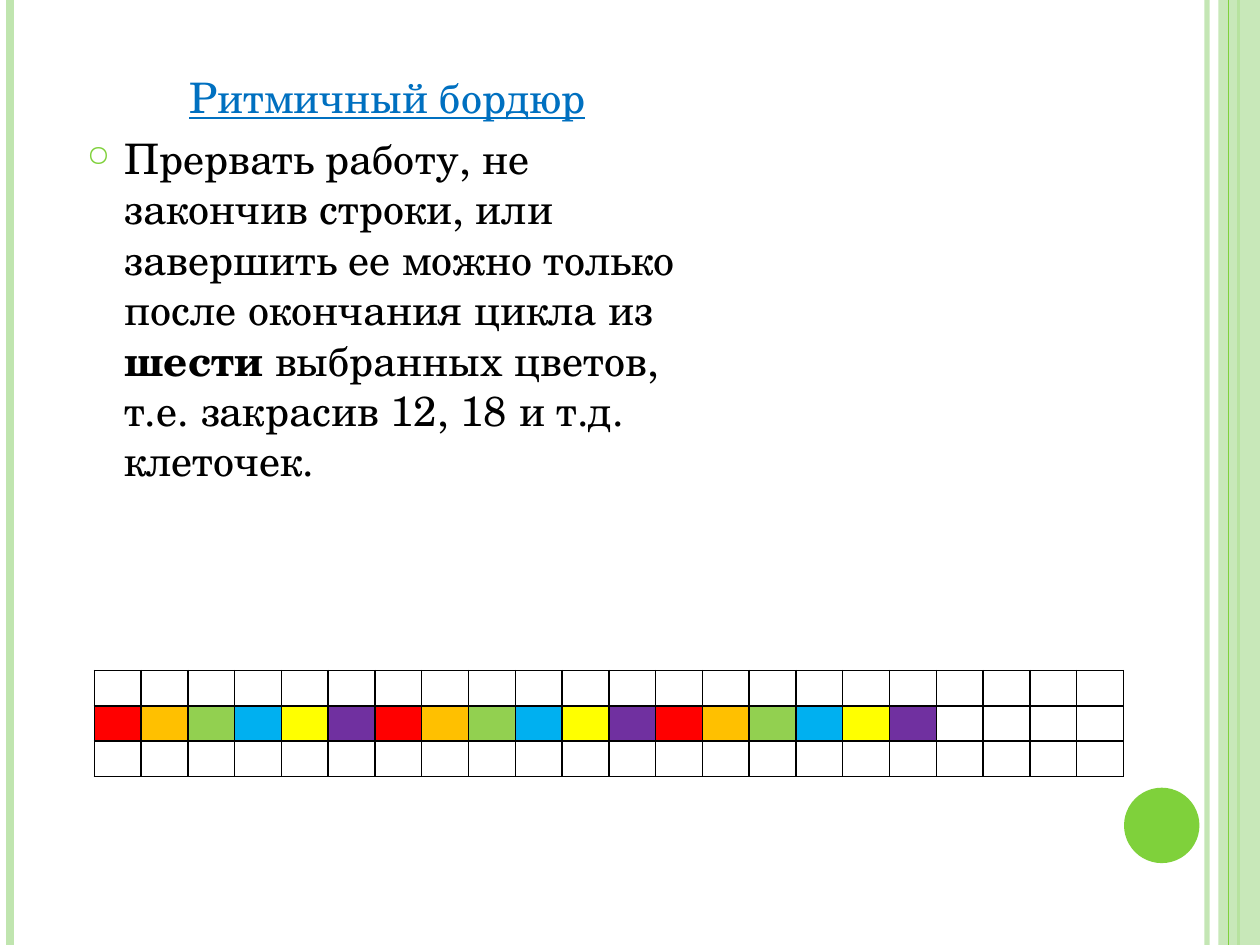
from itertools import cycle, islice

from pptx import Presentation
from pptx.dml.color import RGBColor
from pptx.enum.shapes import MSO_CONNECTOR as Connector, MSO_SHAPE as Shape
from pptx.enum.text import PP_ALIGN as Align
from pptx.oxml.ns import qn
from pptx.util import Cm, Pt
from lxml.etree import SubElement

FONT = "TeX Gyre Schola"
COLORS = {
    "pale": "C0E5AF", "accent": "7FD13B", "title": "0070C0", "text": "000000",
    "red": "FF0000", "orange": "FFC000", "green": "92D050",
    "blue": "00B0F0", "yellow": "FFFF00", "violet": "7030A0",
}
CYCLE = ["red", "orange", "green", "blue", "yellow", "violet"]
WIDTH, HEIGHT = 25.4, 19.05


def rgb(name):
    return RGBColor.from_string(COLORS[name])


def set_alpha(element, percent):
    color = next(element.iter(qn("a:srgbClr")))
    SubElement(color, qn("a:alpha"), val=str(percent * 1000))


class BorderSlide:
    def __init__(self, deck):
        self.slide = deck.slides.add_slide(deck.slide_layouts[6])
        self.shapes = self.slide.shapes

    def stripe(self, x, color, points, alpha=100):
        """Draw a vertical line over the full height of the slide."""
        line = self.shapes.add_connector(Connector.STRAIGHT, Cm(x), 0, Cm(x), Cm(HEIGHT))
        line.line.color.rgb = rgb(color)
        line.line.width = Pt(points)
        properties = line._element.spPr
        if alpha < 100:
            set_alpha(properties, alpha)
        SubElement(properties, qn("a:effectLst"))

    def shape(self, kind, x, y, width, height, color, alpha=100):
        shape = self.shapes.add_shape(kind, Cm(x), Cm(y), Cm(width), Cm(height))
        shape.shadow.inherit = False
        shape.fill.solid()
        shape.fill.fore_color.rgb = rgb(color)
        shape.line.fill.background()
        if alpha < 100:
            set_alpha(shape._element.spPr, alpha)

    def text_frame(self, x, y, width, height):
        frame = self.shapes.add_textbox(Cm(x), Cm(y), Cm(width), Cm(height)).text_frame
        frame.word_wrap = True
        return frame

    def paragraph(self, para, spans, color, bullet=None):
        """Fill a paragraph with (text, bold) spans."""
        if bullet:
            indent = Cm(0.76)
            properties = para._p.get_or_add_pPr()
            properties.set("marL", str(indent))
            properties.set("indent", str(-indent))
            bullet_color = SubElement(properties, qn("a:buClr"))
            SubElement(bullet_color, qn("a:srgbClr"), val=COLORS["accent"])
            SubElement(properties, qn("a:buSzPct"), val="70000")
            SubElement(properties, qn("a:buChar"), char=bullet)
        para.font.name = FONT
        para.font.size = Pt(24)
        para.font.color.rgb = rgb(color)
        for text, bold in spans:
            span = para.add_run()
            span.text = text
            if bold:
                span.font.bold = True

    def grid(self, x, y, width, height, rows):
        """Draw a table of coloured cells; None leaves a cell empty."""
        table = self.shapes.add_table(
            len(rows), len(rows[0]), Cm(x), Cm(y), Cm(width), Cm(height)).table
        table.first_row = table.horz_banding = False
        for row, colors in zip(table.rows, rows):
            row.height = Cm(height / len(rows))
            for cell, color in zip(row.cells, colors):
                self.cell(cell, color)
        for column in table.columns:
            column.width = Cm(width / len(rows[0]))

    def cell(self, cell, color):
        cell.margin_top = cell.margin_bottom = 0
        SubElement(cell.text_frame.paragraphs[0]._p, qn("a:endParaRPr"), sz="800")
        properties = cell._tc.get_or_add_tcPr()
        for side in ("lnL", "lnR", "lnT", "lnB"):
            border = SubElement(properties, qn(f"a:{side}"), w=str(Pt(1)))
            fill = SubElement(border, qn("a:solidFill"))
            SubElement(fill, qn("a:srgbClr"), val=COLORS["text"])
        if color:
            cell.fill.solid()
            cell.fill.fore_color.rgb = rgb(color)
        else:
            cell.fill.background()


def main():
    deck = Presentation()
    deck.slide_width, deck.slide_height = Cm(WIDTH), Cm(HEIGHT)
    page = BorderSlide(deck)

    page.stripe(24.33, "pale", 3, alpha=93)
    page.stripe(0.2, "pale", 4.5)
    page.stripe(24.97, "accent", 1.5)
    page.shape(Shape.RECTANGLE, 24.56, 0, 0.84, HEIGHT, "pale", alpha=87)
    page.stripe(24.76, "accent", 0.75)
    page.shape(Shape.OVAL, 22.66, 15.88, 1.52, 1.52, "accent")

    frame = page.text_frame(1.5, 1.32, 12.62, 10)
    title = frame.paragraphs[0]
    title.alignment = Align.CENTER
    page.paragraph(title, [("Ритмичный бордюр", False)], "title")
    title.font.underline = True
    rule = frame.add_paragraph()
    rule.space_before = Pt(6)
    page.paragraph(rule, [
        ("Прервать работу, не закончив строки, или завершить ее можно только "
         "после окончания цикла из ", False),
        ("шести", True),
        (" выбранных цветов, т.е. закрасив 12, 18 и т.д. клеточек.", False),
    ], "text", bullet="○")

    columns, painted = 22, 3 * len(CYCLE)
    blank = [None] * columns
    pattern = list(islice(cycle(CYCLE), painted)) + blank[painted:]
    page.grid(1.9, 13.52, 20.75, 2.13, [blank, pattern, blank])

    deck.save("out.pptx")


if __name__ == "__main__":
    main()
